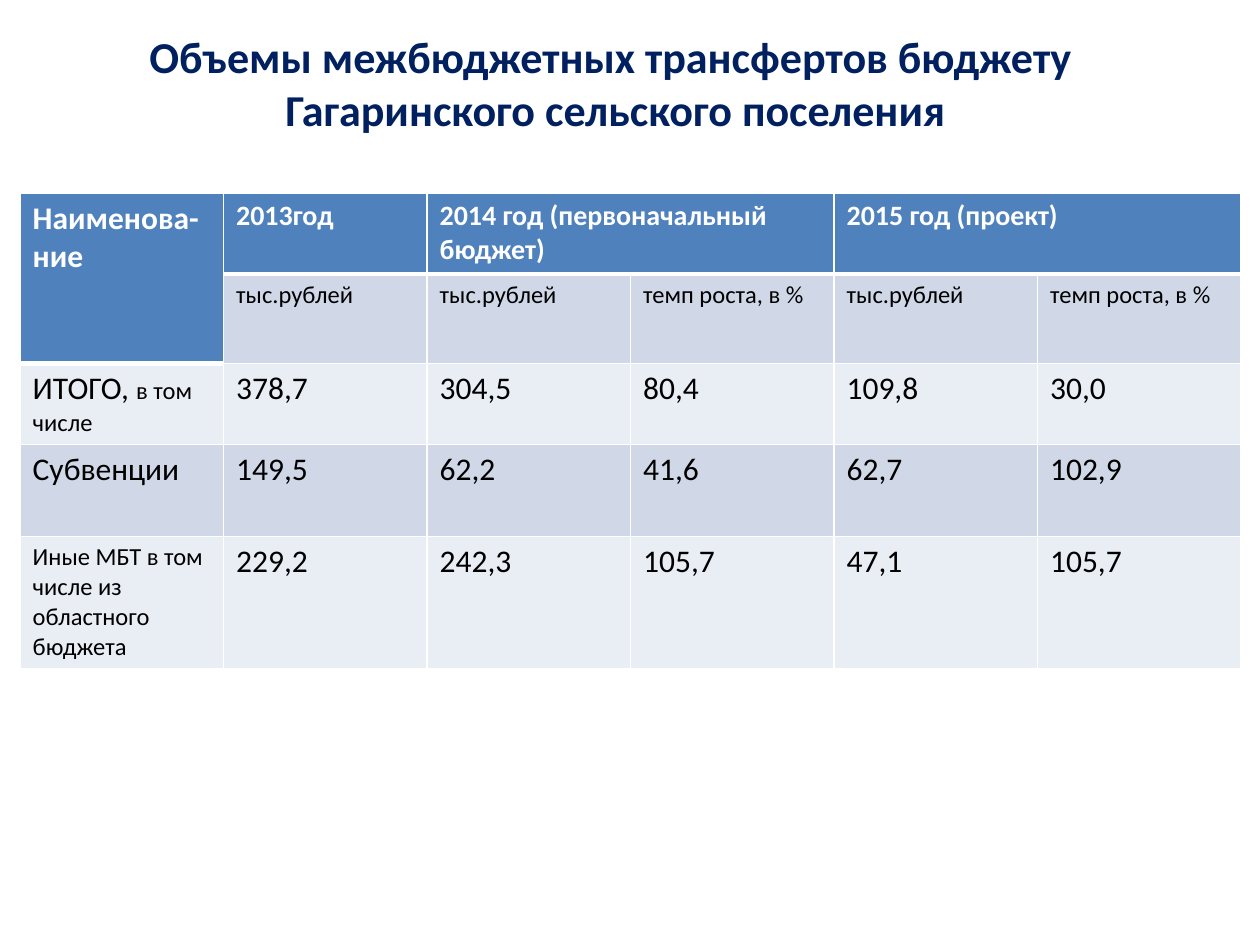
from lxml import etree
from pptx import Presentation
from pptx.dml.color import RGBColor
from pptx.enum.text import MSO_ANCHOR, MSO_AUTO_SIZE, PP_ALIGN
from pptx.oxml.ns import qn
from pptx.util import Inches, Pt

# Content: a cell is a list of paragraphs, a paragraph a list of (text, size)
TITLE = "Объемы межбюджетных трансфертов бюджету \vГагаринского сельского поселения"
UNITS, GROWTH = "тыс.рублей", "темп роста, в %"
HEADER = {
    0: [[("Наименова-", 18)], [("ние", 18)]],
    1: [[("2013год", 16)]],
    2: [[("2014 год (первоначальный бюджет)", 16)]],
    4: [[("2015 год (проект)", 16)]],
}
SUBHEADER = [UNITS, UNITS, GROWTH, UNITS, GROWTH]
BODY = [
    ([("ИТОГО, ", 18), ("в том числе", 14)], ["378,7", "304,5", "80,4", "109,8", "30,0"]),
    ([("Субвенции", 18)], ["149,5", "62,2", "41,6", "62,7", "102,9"]),
    ([("Иные МБТ в том числе из областного бюджета", 14)],
     ["229,2", "242,3", "105,7", "47,1", "105,7"]),
]
MERGES = [((0, 0), (1, 0)), ((0, 2), (0, 3)), ((0, 4), (0, 5))]
ROW_HEIGHTS = [0.63, 0.71, 0.64, 0.73, 1.05]
COLUMNS, COLUMN_WIDTH = 6, 1.615
COLORS = {"title": "002060", "header": "4F81BD", "band": "D0D8E8",
          "light": "E9EDF4", "white": "FFFFFF", "text": "000000"}


def format_span(span, size, color, bold):
    for name, value in {"name": "Calibri", "size": Pt(size), "bold": bold}.items():
        setattr(span.font, name, value)
    span.font.color.rgb = RGBColor.from_string(COLORS[color])


def write_cell(cell, paragraphs, color, bold):
    frame = cell.text_frame
    for index, spans in enumerate(paragraphs):
        para = frame.add_paragraph() if index else frame.paragraphs[0]
        for text, size in spans:
            span = para.add_run()
            span.text = text
            format_span(span, size, color, bold)


def set_borders(cell, widths):
    properties = cell._tc.get_or_add_tcPr()
    for index, (side, width) in enumerate(widths.items()):
        line = etree.Element(qn(f"a:ln{side}"), w=str(Pt(width)))
        fill = etree.SubElement(line, qn("a:solidFill"))
        etree.SubElement(fill, qn("a:srgbClr"), val=COLORS["white"])
        properties.insert(index, line)


def is_header(row, column):
    return row == 0 or (row == 1 and column == 0)


deck = Presentation()
deck.slide_width, deck.slide_height = Inches(10), Inches(7.5)
page = deck.slides.add_slide(deck.slide_layouts[0])
subtitle = page.placeholders[1]
subtitle.element.getparent().remove(subtitle.element)

# Title
title = page.shapes.title
for name, value in {"left": 0.2, "top": 0.21, "width": 9.37, "height": 0.89}.items():
    setattr(title, name, Inches(value))
title.text_frame.auto_size = MSO_AUTO_SIZE.NONE
title.text_frame.vertical_anchor = MSO_ANCHOR.MIDDLE
title.text_frame.text = TITLE
heading = title.text_frame.paragraphs[0]
heading.alignment = PP_ALIGN.CENTER
for span in heading.runs:
    format_span(span, 25.2, "title", True)

# Table grid
table = page.shapes.add_table(
    len(ROW_HEIGHTS), COLUMNS, Inches(0.16), Inches(1.53),
    Inches(COLUMNS * COLUMN_WIDTH), Inches(sum(ROW_HEIGHTS))).table
for column in table.columns:
    column.width = Inches(COLUMN_WIDTH)
for row, height in zip(table.rows, ROW_HEIGHTS):
    row.height = Inches(height)
for start, end in MERGES:
    table.cell(*start).merge(table.cell(*end))

# Fills and borders, with a heavy rule under the header
for row in range(len(ROW_HEIGHTS)):
    for column in range(COLUMNS):
        cell = table.cell(row, column)
        header = is_header(row, column)
        fill = "header" if header else "band" if row % 2 else "light"
        cell.fill.solid()
        cell.fill.fore_color.rgb = RGBColor.from_string(COLORS[fill])
        under_header = row > 0 and not header and is_header(row - 1, column)
        set_borders(cell, {"L": 1, "R": 1, "T": 3 if under_header else 1,
                           "B": 3 if header else 1})

# Table text
for column, paragraphs in HEADER.items():
    write_cell(table.cell(0, column), paragraphs, "white", True)
for column, text in enumerate(SUBHEADER, 1):
    write_cell(table.cell(1, column), [[(text, 14)]], "text", False)
for row, (label, values) in enumerate(BODY, 2):
    write_cell(table.cell(row, 0), [label], "text", False)
    for column, value in enumerate(values, 1):
        write_cell(table.cell(row, column), [[(value, 18)]], "text", False)

deck.save("out.pptx")
